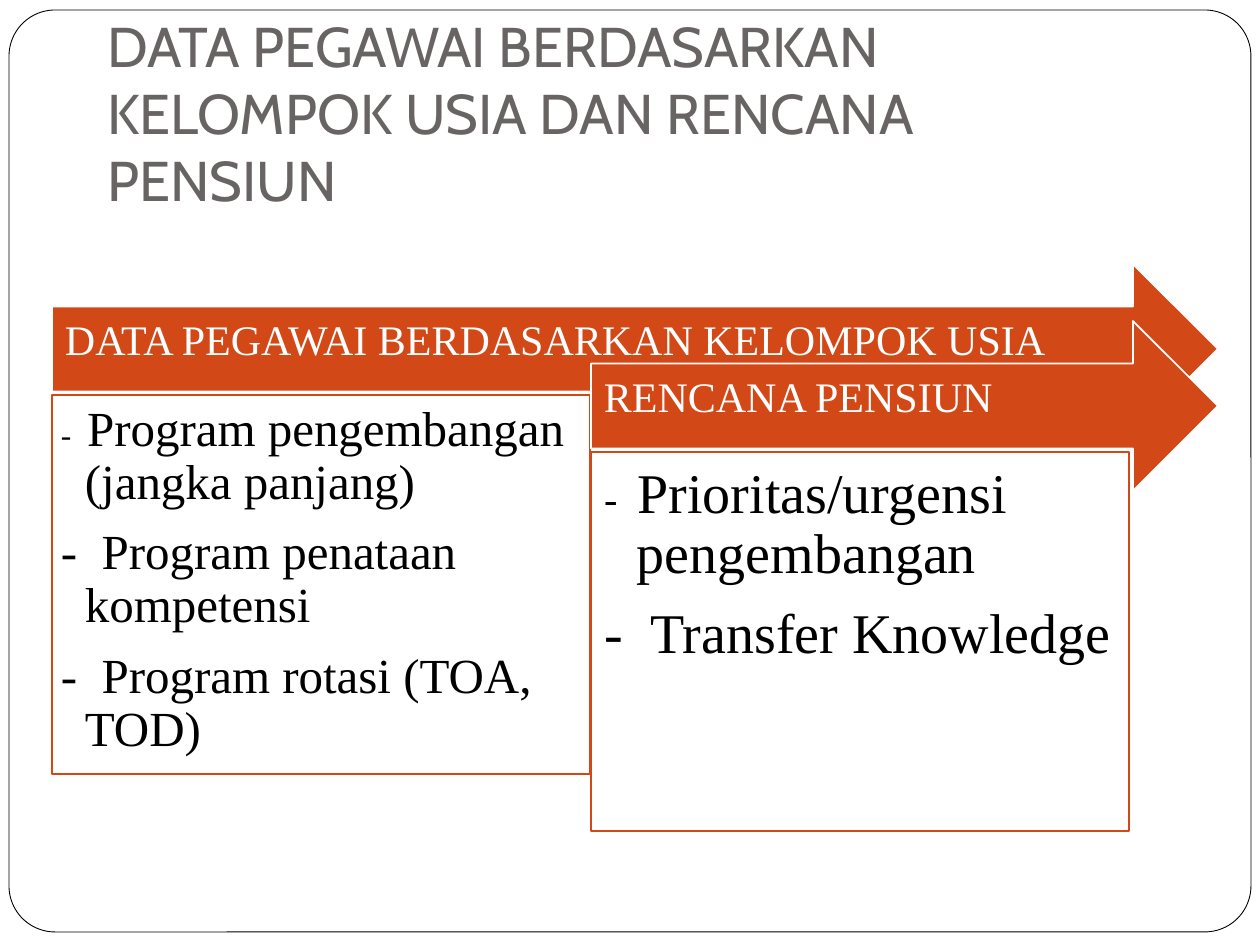
from dataclasses import dataclass

from lxml import etree
from pptx import Presentation
from pptx.dml.color import RGBColor
from pptx.enum.shapes import MSO_SHAPE
from pptx.enum.text import MSO_ANCHOR, MSO_AUTO_SIZE, PP_ALIGN
from pptx.oxml.ns import qn
from pptx.util import Pt

EMU_PER_PX = 914400 / 126
ROUND_RECT, RIGHT_ARROW = MSO_SHAPE.ROUNDED_RECTANGLE, MSO_SHAPE.RIGHT_ARROW
TOP, MIDDLE, BOTTOM = MSO_ANCHOR.TOP, MSO_ANCHOR.MIDDLE, MSO_ANCHOR.BOTTOM
LEFT = PP_ALIGN.LEFT
NO_AUTOFIT = MSO_AUTO_SIZE.NONE

COLORS = {
    "white": "FFFFFF",
    "black": "000000",
    "title": "696464",
    "accent": "D34817",
}
TITLE_FONT, BODY_FONT = "Cabin", "Times New Roman"

ARROW_RIGHT, ARROW_H = 1218, 170
PANEL_W, PANEL_H, PANEL_DROP = 538, 379, 131


@dataclass
class Stage:
    heading: str
    items: list[str]
    left: int
    top: int
    size: int
    first_dash_size: int
    indent: int
    inset: int


STAGES = [
    Stage("DATA PEGAWAI BERDASARKAN KELOMPOK USIA",
          ["Program pengembangan (jangka panjang)",
           "Program penataan kompetensi",
           "Program rotasi (TOA, TOD)"],
          52, 264, 28, 18, 24, 9),
    Stage("RENCANA PENSIUN",
          ["Prioritas/urgensi pengembangan", "Transfer Knowledge"],
          591, 321, 32, 23, 33, 13),
]


def px(n: int) -> int:
    return round(n * EMU_PER_PX)


def rgb(name: str) -> RGBColor:
    return RGBColor.from_string(COLORS[name])


def place(sp, left: int, top: int, width: int, height: int) -> None:
    sp.left, sp.top, sp.width, sp.height = map(px, (left, top, width, height))


def paint(sp, fill: str, line: str, weight: float) -> None:
    sp.fill.solid()
    sp.fill.fore_color.rgb = rgb(fill)
    sp.line.color.rgb = rgb(line)
    sp.line.width = Pt(weight)


def set_frame(tf, anchor, left: int, top: int, right: int, bottom: int) -> None:
    tf.word_wrap = True
    tf.auto_size = NO_AUTOFIT
    tf.vertical_anchor = anchor
    tf.margin_left, tf.margin_top = px(left), px(top)
    tf.margin_right, tf.margin_bottom = px(right), px(bottom)


def style(p, font: str, size: int, color: str) -> None:
    p.alignment = LEFT
    for r in p.runs:
        r.font.name = font
        r.font.size = Pt(size)
        r.font.color.rgb = rgb(color)


def hang(p, indent: int) -> None:
    """Give the paragraph a hanging indent and no template bullet."""
    pPr = p._p.get_or_add_pPr()
    pPr.set("marL", str(px(indent)))
    pPr.set("indent", str(-px(indent)))
    etree.SubElement(pPr, qn("a:buNone"))


def widen_dash(r, size: int) -> None:
    """Size the dash and space it out by an eighth of its size per letter."""
    r.font.size = Pt(size)
    r.font._element.set("spc", str(round(size * 12.5)))


def add_shape(s, kind, left: int, top: int, width: int, height: int):
    sp = s.shapes.add_shape(kind, *map(px, (left, top, width, height)))
    sp.shadow.inherit = False
    return sp


def draw_border(s) -> None:
    sp = add_shape(s, ROUND_RECT, 9, 10, 1242, 922)
    sp.adjustments[0] = 0.05
    paint(sp, "white", "black", 0.5)
    s.shapes._spTree.insert(2, sp._element)  # behind the placeholders


def fill_title(sp) -> None:
    place(sp, 94, 4, 1071, 222)
    tf = sp.text_frame
    tf.text = "DATA PEGAWAI BERDASARKAN KELOMPOK USIA DAN RENCANA PENSIUN"
    set_frame(tf, BOTTOM, 13, 6, 13, 13)
    style(tf.paragraphs[0], TITLE_FONT, 32, "title")


def draw_arrow(s, stage: Stage) -> None:
    sp = add_shape(s, RIGHT_ARROW, stage.left, stage.top,
                   ARROW_RIGHT - stage.left, ARROW_H)
    paint(sp, "accent", "white", 1)
    tf = sp.text_frame
    tf.text = stage.heading
    set_frame(tf, MIDDLE, 13, 13, 35, 28)
    p = tf.paragraphs[0]
    p.line_spacing = 0.9
    style(p, BODY_FONT, 24, "white")


def fill_panel(sp, stage: Stage) -> None:
    place(sp, stage.left, stage.top + PANEL_DROP, PANEL_W, PANEL_H)
    paint(sp, "white", "accent", 1)
    tf = sp.text_frame
    tf.text = "\n".join("- " for _ in stage.items)
    set_frame(tf, TOP, *[stage.inset] * 4)
    for i, (p, item) in enumerate(zip(tf.paragraphs, stage.items)):
        p.add_run().text = item
        p.line_spacing = 0.9
        p.space_before = Pt(0)
        p.space_after = Pt(round(stage.size * 0.35))
        style(p, BODY_FONT, stage.size, "black")
        widen_dash(p.runs[0], stage.size if i else stage.first_dash_size)
        hang(p, stage.indent)


def main() -> None:
    prs = Presentation()
    prs.slide_width, prs.slide_height = px(1260), px(945)
    s = prs.slides.add_slide(prs.slide_layouts[3])
    title, *panels = s.placeholders
    draw_border(s)
    fill_title(title)
    for stage, panel in zip(STAGES, panels):
        fill_panel(panel, stage)
        draw_arrow(s, stage)
    prs.save("out.pptx")


if __name__ == "__main__":
    main()
